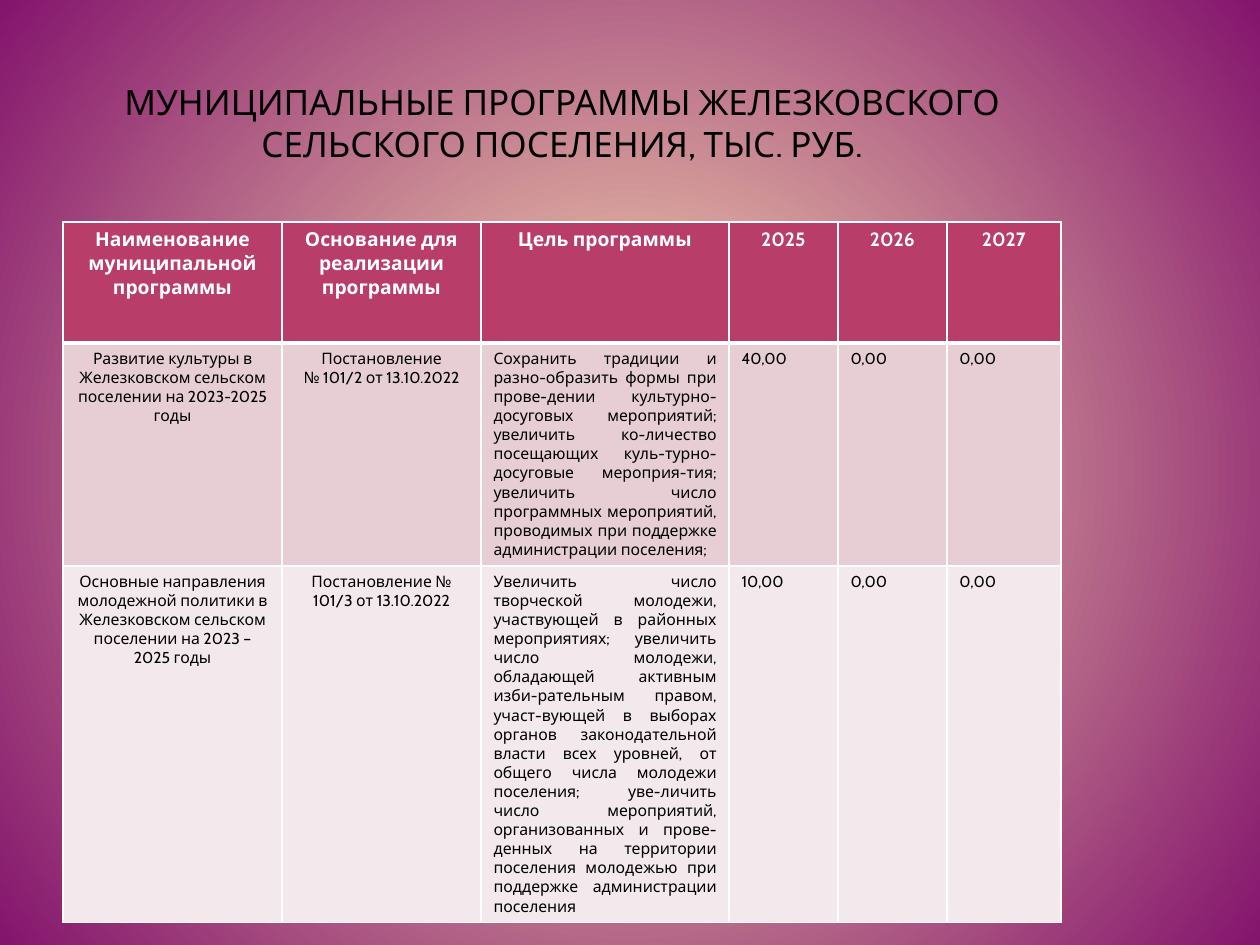
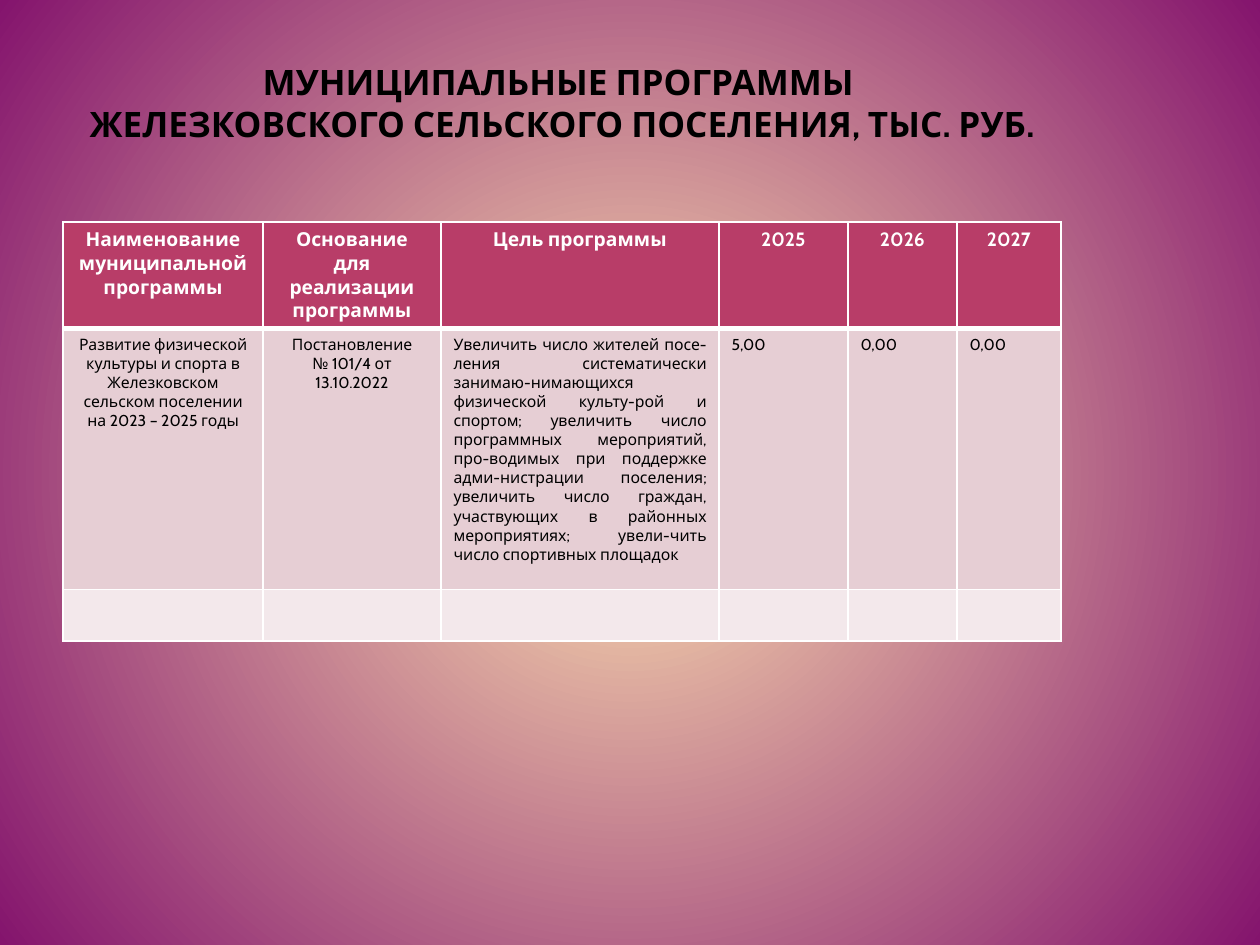
from lxml import etree
from pptx import Presentation
from pptx.dml.color import RGBColor
from pptx.enum.text import MSO_ANCHOR, MSO_AUTO_SIZE, PP_ALIGN
from pptx.oxml.ns import qn
from pptx.util import Pt

CENTER, LEFT, JUST = PP_ALIGN.CENTER, PP_ALIGN.LEFT, PP_ALIGN.JUSTIFY
BOTTOM = MSO_ANCHOR.BOTTOM
NO_FIT = MSO_AUTO_SIZE.NONE
DPI = 126
FONT = "Cabin"
BLACK, WHITE = "000000", "FFFFFF"
GLOW, EDGE = "FDE2B0", "84146D"
FILLS = ["B83D68", "E6CED4", "F3E8EB"]
ALIGNS = [CENTER, CENTER, JUST, LEFT, LEFT, LEFT]
HEADS = ["Наименование муниципальной программы",
         "Основание для реализации программы",
         "Цель программы", "2025", "2026", "2027"]

CULTURE = ["Развитие культуры в Железковском сельском поселении на 2023-2025 годы",
           "Постановление\n№ 101/2 от 13.10.2022",
           "Сохранить традиции и разно-образить формы при прове-дении "
           "культурно-досуговых мероприятий; увеличить ко-личество посещающих "
           "куль-турно-досуговые мероприя-тия; увеличить число программных "
           "мероприятий, проводимых при поддержке администрации поселения;",
           "40,00", "0,00", "0,00"]
YOUTH = ["Основные направления молодежной политики в Железковском сельском "
         "поселении на 2023 – 2025 годы",
         "Постановление № 101/3 от 13.10.2022",
         "Увеличить число творческой молодежи, участвующей в районных "
         "мероприятиях; увеличить число молодежи, обладающей активным "
         "изби-рательным правом, участ-вующей в выборах органов законодательной "
         "власти всех уровней, от общего числа молодежи поселения; уве-личить "
         "число мероприятий, организованных и прове-денных на территории "
         "поселения молодежью при поддержке администрации поселения",
         "10,00", "0,00", "0,00"]
SPORT = ["Развитие физической культуры и спорта в Железковском сельском "
         "поселении на 2023 – 2025 годы",
         "Постановление\n№ 101/4 от 13.10.2022",
         "Увеличить число жителей посе-ления систематически занимаю-нимающихся "
         "физической культу-рой и спортом; увеличить число программных "
         "мероприятий, про-водимых при поддержке адми-нистрации поселения; "
         "увеличить число граждан, участвующих в районных мероприятиях; "
         "увели-чить число спортивных площадок",
         "5,00", "0,00", "0,00"]
EMPTY = [""] * len(HEADS)


def px(n):
    return round(n * 914400 / DPI)


def rgb(code):
    return RGBColor.from_string(code)


class Deck:
    """Holds the shared style and the slide being built."""

    def __init__(self):
        self.prs = Presentation()
        self.prs.slide_width, self.prs.slide_height = px(1260), px(945)
        self.slide = None
        self.backdrop()

    def backdrop(self):
        """Give the master a round gradient that starts at the slide centre."""
        master = self.prs.slide_master
        fill = master.background.fill
        fill.gradient()
        for stop, code in zip(fill.gradient_stops, (GLOW, EDGE)):
            stop.color.rgb = rgb(code)
        grad = master.element.find(".//" + qn("a:gradFill"))
        grad.remove(grad.find(qn("a:lin")))
        shade = etree.SubElement(grad, qn("a:path"))
        shade.set("path", "circle")
        rect = etree.SubElement(shade, qn("a:fillToRect"))
        for side in "ltrb":
            rect.set(side, "50000")

    def page(self):
        self.slide = self.prs.slides.add_slide(self.prs.slide_layouts[5])

    def run(self, para, text, size, code, bold):
        run = para.add_run()
        run.text = text
        font = run.font
        font.name, font.size, font.bold = FONT, Pt(size), bold
        font.color.rgb = rgb(code)

    def title(self, lines, height, bold):
        box = self.slide.shapes.title
        box.left, box.top, box.width, box.height = px(63), px(44), px(998), px(height)
        frame = box.text_frame
        frame.word_wrap, frame.auto_size = True, NO_FIT
        frame.vertical_anchor = BOTTOM
        frame.margin_left = frame.margin_right = px(6)
        frame.margin_top = frame.margin_bottom = 0
        para = frame.paragraphs[0]
        para.alignment = CENTER
        for i, line in enumerate(lines):
            if i:
                para.add_line_break()
            self.run(para, line, 20, BLACK, bold)

    def border(self, cell, top, bottom):
        props = cell._tc.get_or_add_tcPr()
        for side, width in zip("LRTB", (1, 1, top, bottom)):
            line = etree.SubElement(props, qn("a:ln" + side), w=str(Pt(width)))
            paint = etree.SubElement(line, qn("a:solidFill"))
            etree.SubElement(paint, qn("a:srgbClr"), val=WHITE)

    def cell(self, cell, text, row, align):
        head = row == 0
        self.border(cell, 3 if row == 1 else 1, 3 if head else 1)
        cell.fill.solid()
        cell.fill.fore_color.rgb = rgb(FILLS[row])
        frame = cell.text_frame
        for i, line in enumerate(text.split("\n") if text else []):
            para = frame.add_paragraph() if i else frame.paragraphs[0]
            para.alignment = CENTER if head else align
            self.run(para, line, 11 if head else 9, WHITE if head else BLACK, head)

    def table(self, widths, heights, body):
        rows = [HEADS] + body
        table = self.slide.shapes.add_table(
            len(rows), len(HEADS), px(63), px(222),
            px(sum(widths)), px(sum(heights))).table
        for col, width in zip(table.columns, widths):
            col.width = px(width)
        for r, (texts, height) in enumerate(zip(rows, heights)):
            table.rows[r].height = px(height)
            for c, (text, align) in enumerate(zip(texts, ALIGNS)):
                self.cell(table.cell(r, c), text, r, align)


def main():
    deck = Deck()
    deck.page()
    deck.title(["МУНИЦИПАЛЬНЫЕ ПРОГРАММЫ ЖЕЛЕЗКОВСКОГО СЕЛЬСКОГО ПОСЕЛЕНИЯ, ТЫС. РУБ."],
               121, False)
    deck.table([219, 199, 248, 109, 109, 114], [121, 223, 356], [CULTURE, YOUTH])
    deck.page()
    deck.title(["МУНИЦИПАЛЬНЫЕ ПРОГРАММЫ ", "ЖЕЛЕЗКОВСКОГО СЕЛЬСКОГО ПОСЕЛЕНИЯ, ТЫС. РУБ."],
               101, True)
    deck.table([200, 178, 278, 129, 109, 104], [106, 261, 51], [SPORT, EMPTY])
    deck.prs.save("out.pptx")


if __name__ == "__main__":
    main()
